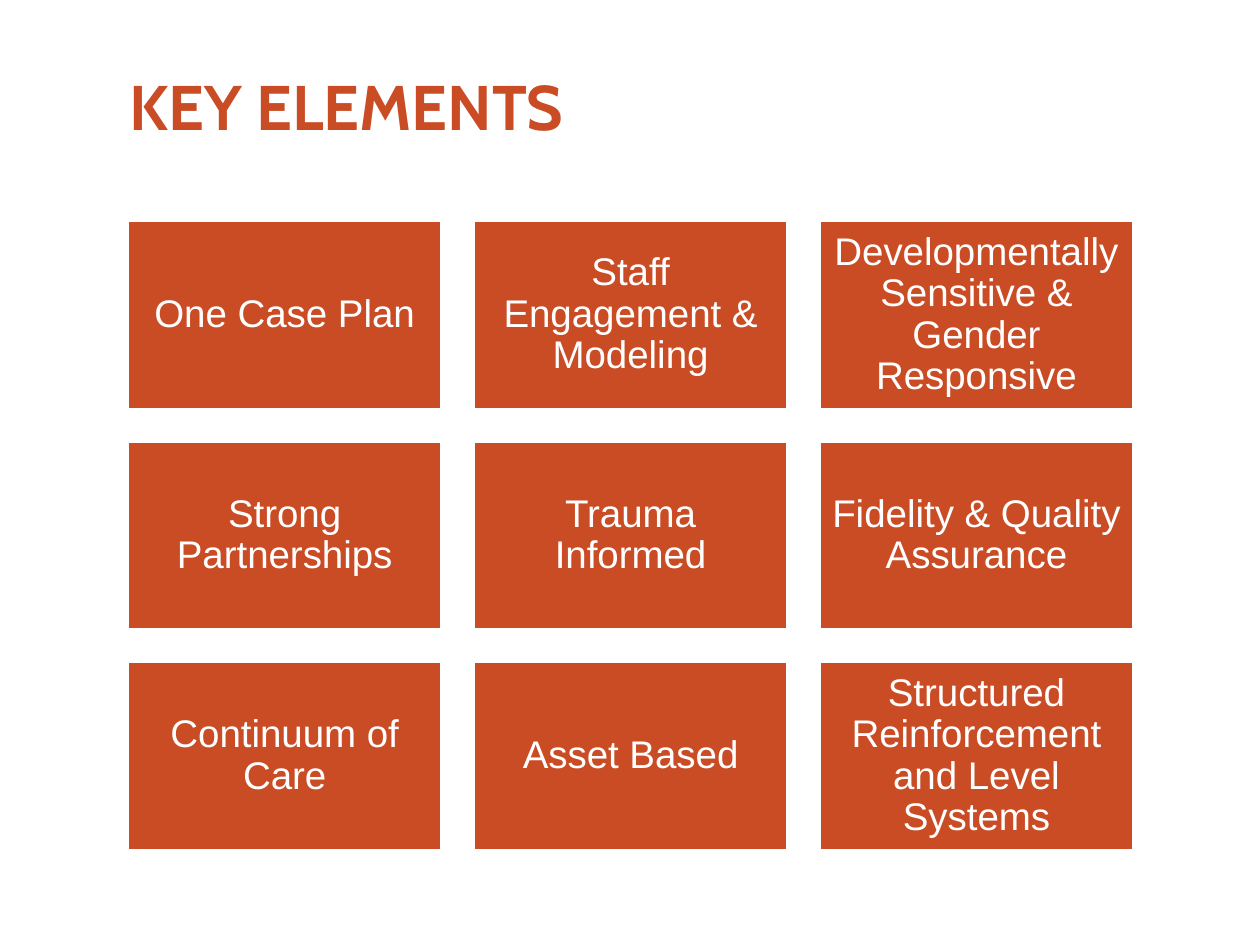
from pptx import Presentation
from pptx.dml.color import RGBColor
from pptx.enum.shapes import MSO_SHAPE
from pptx.enum.text import MSO_ANCHOR, MSO_AUTO_SIZE, PP_ALIGN
from pptx.util import Inches, Pt

RUST = "C94C25"
WHITE = "FFFFFF"
COLUMNS = 3
ELEMENTS = [
    "One Case Plan",
    "Staff Engagement & Modeling",
    "Developmentally Sensitive & Gender Responsive",
    "Strong Partnerships",
    "Trauma Informed",
    "Fidelity & Quality Assurance",
    "Continuum of Care",
    "Asset Based",
    "Structured Reinforcement and Level Systems",
]


def color(hex_value):
    """Turn a hex string into a colour."""
    return RGBColor.from_string(hex_value)


def set_margins(frame, left, top, right, bottom):
    """Set the four insets of a text frame, in inches."""
    frame.margin_left, frame.margin_top = Inches(left), Inches(top)
    frame.margin_right, frame.margin_bottom = Inches(right), Inches(bottom)


def style_font(font, name, size, hex_value, bold=False):
    """Set the face, size, colour and weight of a font."""
    font.name, font.size, font.bold = name, Pt(size), bold
    font.color.rgb = color(hex_value)


def place_title(slide, text, left, top, width, height):
    """Move the title placeholder to its box and format it."""
    title = slide.shapes.title
    title.left, title.top = Inches(left), Inches(top)
    title.width, title.height = Inches(width), Inches(height)
    frame = title.text_frame
    frame.text = text
    frame.word_wrap = True
    frame.auto_size = MSO_AUTO_SIZE.NONE
    frame.vertical_anchor = MSO_ANCHOR.MIDDLE
    set_margins(frame, 0.2, 0.05, 0, 0.05)
    heading = frame.paragraphs[0]
    heading.alignment = PP_ALIGN.LEFT
    style_font(heading.font, "Cabin", 36, RUST, bold=True)


def add_tile(slide, text, left, top, width, height):
    """Add one filled tile with centred text."""
    tile = slide.shapes.add_shape(
        MSO_SHAPE.RECTANGLE, Inches(left), Inches(top), Inches(width), Inches(height)
    )
    tile.shadow.inherit = False
    tile.fill.solid()
    tile.fill.fore_color.rgb = color(RUST)
    tile.line.color.rgb = color(WHITE)
    tile.line.width = Pt(2)
    frame = tile.text_frame
    frame.text = text
    frame.word_wrap = True
    frame.vertical_anchor = MSO_ANCHOR.MIDDLE
    set_margins(frame, 0.09, 0.09, 0.09, 0.09)
    label = frame.paragraphs[0]
    label.alignment = PP_ALIGN.CENTER
    label.line_spacing = 0.9
    style_font(label.font, "Arial", 22, WHITE)


def add_tile_grid(slide, elements, left, top, width, height):
    """Spread the tiles evenly over the given box, row by row."""
    tile_width, tile_height = 2.5, 1.5
    rows = len(elements) // COLUMNS
    column_step = (width - tile_width) / (COLUMNS - 1)
    row_step = (height - tile_height) / (rows - 1)
    for index, element in enumerate(elements):
        row, column = divmod(index, COLUMNS)
        add_tile(slide, element, left + column * column_step,
                 top + row * row_step, tile_width, tile_height)


def main():
    """Build the slide and save it."""
    deck = Presentation()
    deck.slide_width, deck.slide_height = Inches(10), Inches(7.5)
    slide = deck.slides.add_slide(deck.slide_layouts.get_by_name("Title Only"))
    place_title(slide, "KEY ELEMENTS", 0.83, 0.4, 5, 0.87)
    add_tile_grid(slide, ELEMENTS, 1.01, 1.75, 7.99, 5)
    deck.save("out.pptx")


if __name__ == "__main__":
    main()
